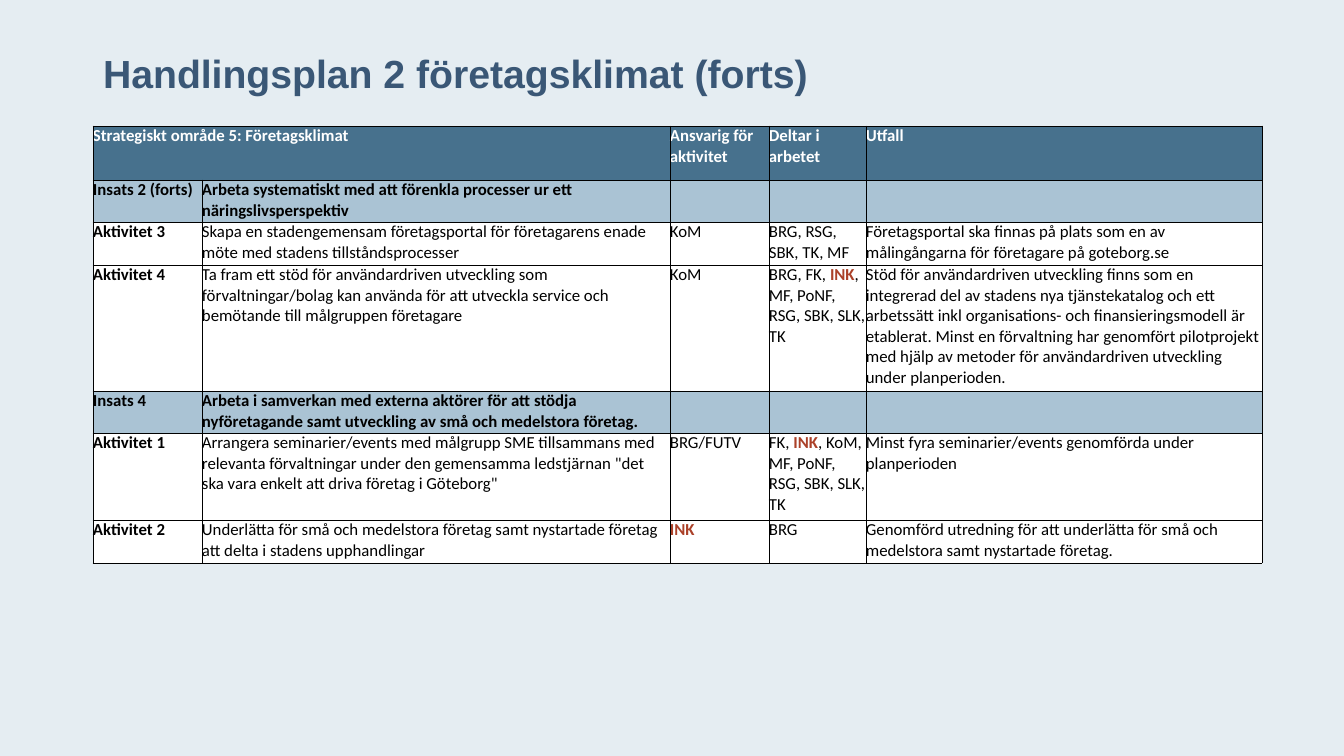
"""Build the action plan slide with its activity table."""
from lxml.etree import SubElement
from pptx import Presentation
from pptx.dml.color import RGBColor
from pptx.enum.text import MSO_ANCHOR, PP_ALIGN
from pptx.oxml.ns import qn
from pptx.util import Emu, Pt

TITLE = "Handlingsplan 2 företagsklimat (forts)"
ROWS = [
    ("header", 54, ["Strategiskt område 5: Företagsklimat", "", "Ansvarig för aktivitet",
                    "Deltar i arbetet", "Utfall"]),
    ("effort", 42, ["Insats 2 (forts)",
                    "Arbeta systematiskt med att förenkla processer ur ett näringslivsperspektiv",
                    "", "", ""]),
    ("activity", 43, ["Aktivitet 3",
                      "Skapa en stadengemensam företagsportal för företagarens enade möte med "
                      "stadens tillståndsprocesser",
                      "KoM", "BRG, RSG, SBK, TK, MF",
                      "Företagsportal ska finnas på plats som en av målingångarna för företagare "
                      "på goteborg.se"]),
    ("activity", 126, ["Aktivitet 4",
                       "Ta fram ett stöd för användardriven utveckling som förvaltningar/bolag kan "
                       "använda för att utveckla service och bemötande till målgruppen företagare",
                       "KoM", "BRG, FK, INK, MF, PoNF, RSG, SBK, SLK, TK",
                       "Stöd för användardriven utveckling finns som en integrerad del av stadens "
                       "nya tjänstekatalog och ett arbetssätt inkl organisations- och "
                       "finansieringsmodell är etablerat. Minst en förvaltning har genomfört "
                       "pilotprojekt med hjälp av metoder för användardriven utveckling under "
                       "planperioden."]),
    ("effort", 42, ["Insats 4",
                    "Arbeta i samverkan med externa aktörer för att stödja nyföretagande samt "
                    "utveckling av små och medelstora företag.",
                    "", "", ""]),
    ("activity", 87, ["Aktivitet 1",
                      "Arrangera seminarier/events med målgrupp SME tillsammans med relevanta "
                      "förvaltningar under den gemensamma ledstjärnan \"det ska vara enkelt att "
                      "driva företag i Göteborg\"",
                      "BRG/FUTV", "FK, INK, KoM, MF, PoNF, RSG, SBK, SLK, TK",
                      "Minst fyra seminarier/events genomförda under planperioden"]),
    ("activity", 43, ["Aktivitet 2",
                      "Underlätta för små och medelstora företag samt nystartade företag att delta "
                      "i stadens upphandlingar",
                      "INK", "BRG",
                      "Genomförd utredning för att underlätta för små och medelstora samt "
                      "nystartade företag."]),
]
HIGHLIGHT = "INK"
COLUMNS = [109, 468, 99, 97, 396]
COLORS = {"background": "E5EDF2", "title": "3A5776", "border": "000000", "text": "000000",
          "header text": "FFFFFF", "highlight": "AB4129",
          "header": "47718D", "effort": "AAC3D4", "activity": "FFFFFF"}
NO_MARGINS = {"margin_left": 0, "margin_right": 0, "margin_top": 0, "margin_bottom": 0}
TITLE_FONT = {"name": "Arial", "size": Pt(28), "bold": True}
CELL_FONT = {"name": "Calibri", "size": Pt(12)}


def px(length):
    return Emu(round(length * 914400 / 100.8))


def color(name):
    return RGBColor.from_string(COLORS[name])


def set_all(target, values):
    for name, value in values.items():
        setattr(target, name, value)


def add_borders(cell):
    properties = cell._tc.get_or_add_tcPr()
    for position, side in enumerate(("lnL", "lnR", "lnT", "lnB")):
        line = SubElement(properties, qn(f"a:{side}"), w=str(Pt(0.5)))
        fill = SubElement(line, qn("a:solidFill"))
        SubElement(fill, qn("a:srgbClr"), val=COLORS["border"])
        properties.insert(position, line)


def write_cell(cell, text, kind, bold):
    set_all(cell, NO_MARGINS)
    cell.fill.solid()
    cell.fill.fore_color.rgb = color(kind)
    add_borders(cell)
    para = cell.text_frame.paragraphs[0]
    set_all(para.font, CELL_FONT)
    for part in text.partition(HIGHLIGHT):
        if part:
            marked = part == HIGHLIGHT
            plain = "header text" if kind == "header" else "text"
            span = para.add_run()
            span.text = part
            set_all(span.font, {**CELL_FONT, "bold": bold or marked})
            span.font.color.rgb = color("highlight" if marked else plain)


def add_title(page):
    box = page.shapes.title
    set_all(box, {"left": px(93), "top": px(47), "width": px(1159), "height": px(54)})
    box.text_frame.vertical_anchor = MSO_ANCHOR.BOTTOM
    para = box.text_frame.paragraphs[0]
    set_all(para, {"alignment": PP_ALIGN.LEFT, "line_spacing": Pt(31)})
    span = para.add_run()
    span.text = TITLE
    set_all(span.font, TITLE_FONT)
    span.font.color.rgb = color("title")


def add_plan(page):
    height = sum(row[1] for row in ROWS)
    table = page.shapes.add_table(len(ROWS), len(COLUMNS), px(93), px(126),
                                  px(sum(COLUMNS)), px(height)).table
    for column, width in zip(table.columns, COLUMNS):
        column.width = px(width)
    for row, (kind, row_height, texts) in zip(table.rows, ROWS):
        row.height = px(row_height)
        for index, (cell, text) in enumerate(zip(row.cells, texts)):
            write_cell(cell, text, kind, kind != "activity" or index == 0)
    table.cell(0, 0).merge(table.cell(0, 1))


def main():
    deck = Presentation()
    set_all(deck, {"slide_width": px(1344), "slide_height": px(756)})
    page = deck.slides.add_slide(deck.slide_layouts[5])
    page.background.fill.solid()
    page.background.fill.fore_color.rgb = color("background")
    add_plan(page)
    add_title(page)
    deck.save("out.pptx")


if __name__ == "__main__":
    main()
